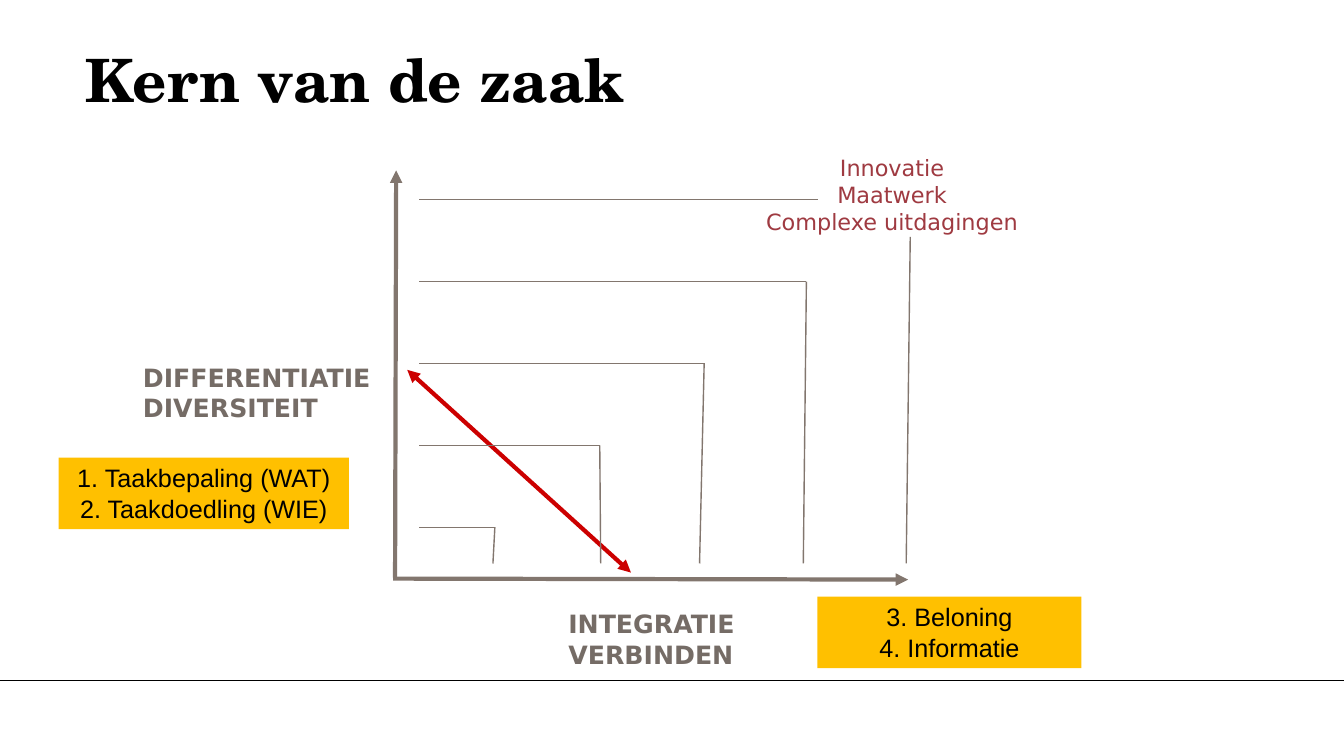
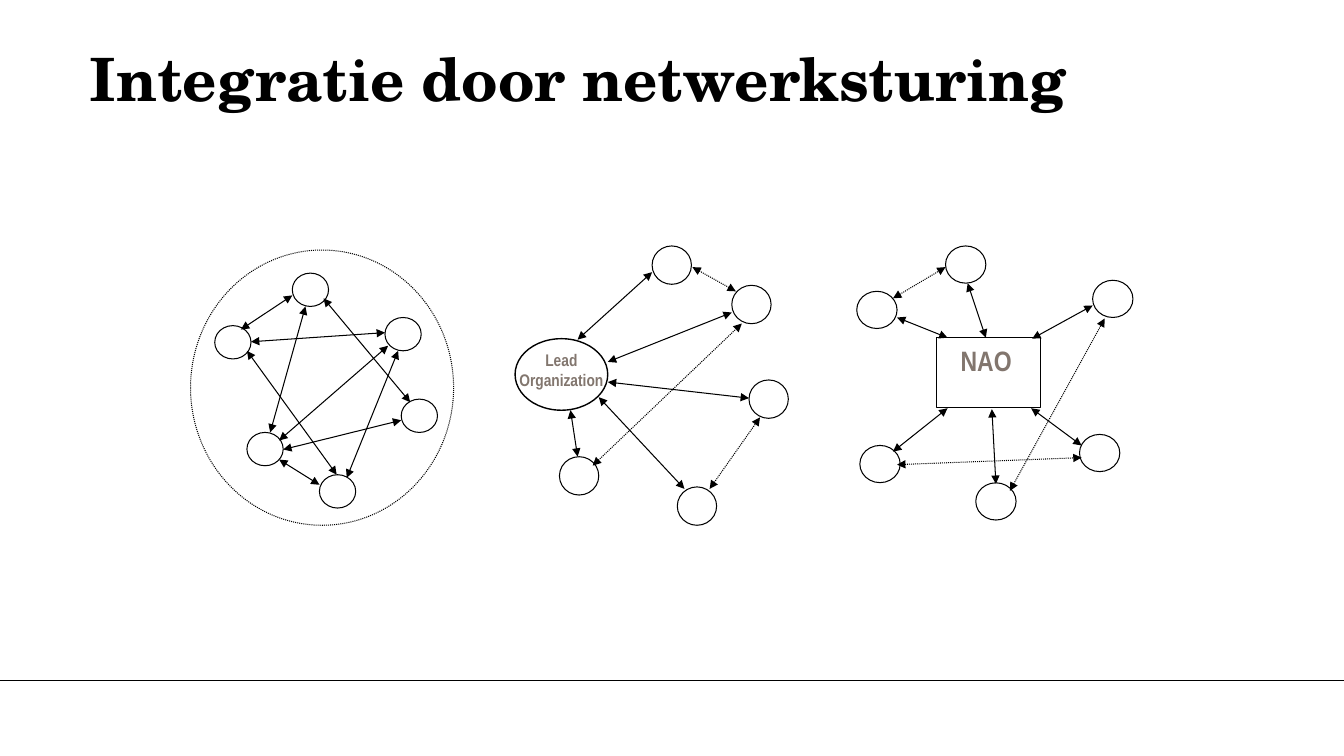
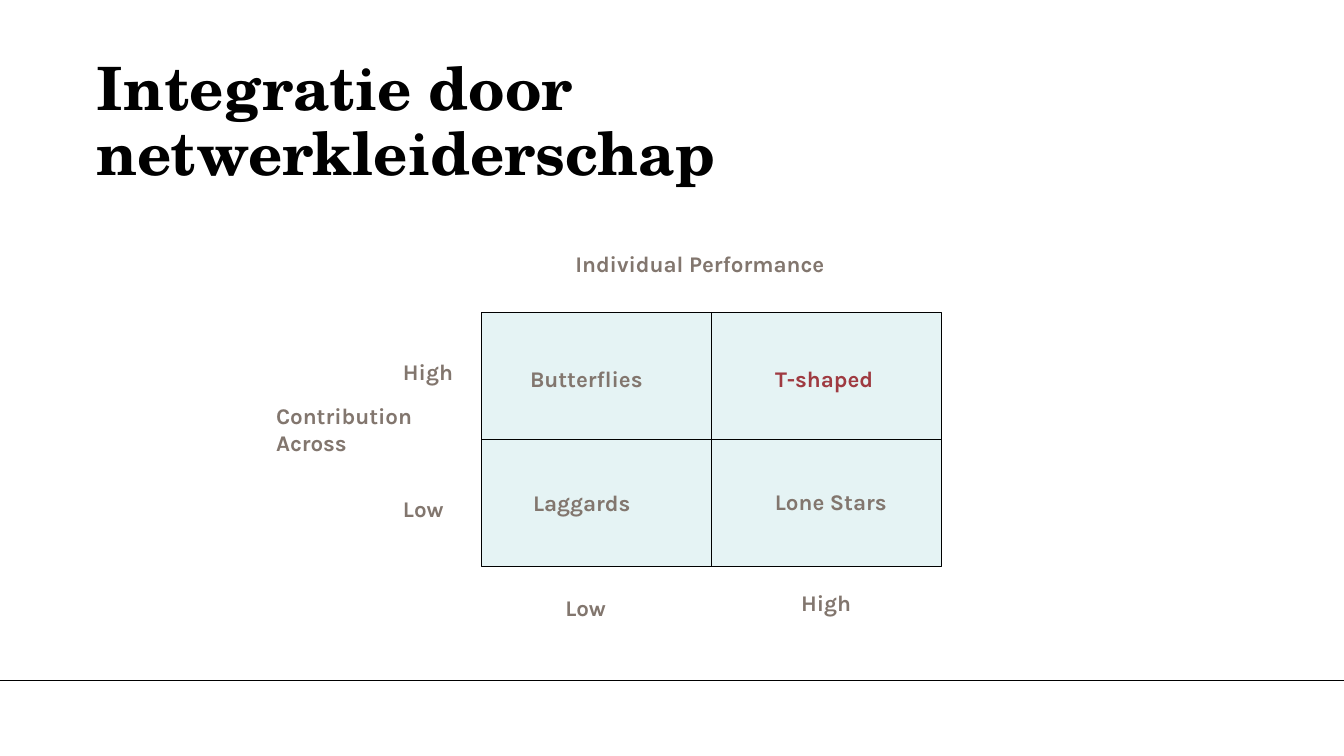
from dataclasses import dataclass
from itertools import product
from typing import NamedTuple

from lxml import etree
from pptx import Presentation
from pptx.dml.color import RGBColor
from pptx.enum import dml, shapes as kinds, text as txt
from pptx.oxml.ns import qn
from pptx.util import Pt


class TextStyle(NamedTuple):
    font: str
    size: float
    color: str
    bold: bool = True
    centered: bool = False


@dataclass(frozen=True)
class Theme:
    ink: str = "000000"
    paper: str = "FFFFFF"
    taupe: str = "82766E"
    tension: str = "CC0000"
    callout: str = "FFC000"
    quadrant: str = "BBE0E3"
    quadrant_opacity: int = 38
    thin: float = 0.75
    title: TextStyle = TextStyle("TeX Gyre Schola", 42.7, "000000")
    axis: TextStyle = TextStyle("DejaVu Sans", 18, "756C66")
    goal: TextStyle = TextStyle("DejaVu Sans", 16, "9F3A41", False, True)
    step: TextStyle = TextStyle("Arial", 18, "000000", False, True)
    lead: TextStyle = TextStyle("Arial Narrow", 12, "82766E", True, True)
    nao: TextStyle = TextStyle("Arial Narrow", 20, "82766E", True, True)
    matrix: TextStyle = TextStyle("Karla", 16, "82766E")
    highlight: TextStyle = TextStyle("Karla", 16, "9F3A41")


THEME = Theme()
WIDTH, HEIGHT, FOOTER_Y = 960, 540, 486
OVAL = kinds.MSO_SHAPE.OVAL
RECTANGLE = kinds.MSO_SHAPE.RECTANGLE


class Box(NamedTuple):
    left: float
    top: float
    width: float
    height: float


class Link(NamedTuple):
    x1: float
    y1: float
    x2: float
    y2: float
    dotted: bool = False


class Bracket(NamedTuple):
    """A step in the chart: a level line, and a drop from its corner to a foot."""
    level_end: float
    corner_x: float
    foot_x: float
    drop: float = 0


class Label(NamedTuple):
    words: str
    box: Box
    style: TextStyle = THEME.matrix


class Hub(NamedTuple):
    kind: kinds.MSO_SHAPE
    box: Box
    weight: float
    fill: str | None = None
    dotted: bool = False
    label: Label | None = None


class Network(NamedTuple):
    hub: Hub
    node_width: float
    node_height: float
    nodes: list[tuple[float, float]]
    links: list[Link]


def write(frame, words: str, style: TextStyle, spacing: float | None = None) -> None:
    frame.word_wrap = True
    frame.vertical_anchor = txt.MSO_ANCHOR.TOP
    frame.text = words
    for paragraph in frame.paragraphs:
        paragraph.alignment = txt.PP_ALIGN.CENTER if style.centered else txt.PP_ALIGN.LEFT
        if spacing:
            paragraph.line_spacing = spacing
        font = paragraph.font
        font.name, font.size, font.bold = style.font, Pt(style.size), style.bold
        font.color.rgb = RGBColor.from_string(style.color)


def add_label(canvas, label: Label, spacing: float | None = None) -> None:
    textbox = canvas.add_textbox(*map(Pt, label.box))
    write(textbox.text_frame, label.words, label.style, spacing)


def set_line(line, color: str, weight: float, dotted: bool = False) -> None:
    line.color.rgb = RGBColor.from_string(color)
    line.width = Pt(weight)
    if dotted:
        line.dash_style = dml.MSO_LINE.ROUND_DOT


def add_figure(canvas, kind, box: Box, fill: str | None, weight: float = 0,
               dotted: bool = False):
    figure = canvas.add_shape(kind, *map(Pt, box))
    figure.shadow.inherit = False
    if fill:
        figure.fill.solid()
        figure.fill.fore_color.rgb = RGBColor.from_string(fill)
    else:
        figure.fill.background()
    if weight:
        set_line(figure.line, THEME.ink, weight, dotted)
    else:
        figure.line.fill.background()
    return figure


def add_line(canvas, link: Link, color: str, weight: float,
             arrows: tuple[str, ...] = ()) -> None:
    """Draw a line; arrows names its pointed ends, headEnd (start) before tailEnd."""
    connector = canvas.add_connector(kinds.MSO_CONNECTOR.STRAIGHT, *map(Pt, link[:4]))
    set_line(connector.line, color, weight, link.dotted)
    properties = connector.element.spPr
    for end in arrows:
        etree.SubElement(properties.find(qn("a:ln")), qn(f"a:{end}"), type="triangle")
    etree.SubElement(properties, qn("a:effectLst"))


BOTH_ENDS = ("headEnd", "tailEnd")


def new_slide(deck, title: str, box: Box):
    canvas = deck.slides.add_slide(deck.slide_layouts[6]).shapes
    add_line(canvas, Link(0, FOOTER_Y, WIDTH, FOOTER_Y), THEME.ink, 0.5)
    add_label(canvas, Label(title, box, THEME.title), spacing=0.9)
    return canvas


LEVEL_LEFT, LEVEL_TOP, LEVEL_GAP, FOOT_Y = 299.5, 142.6, 58.5, 402.5
BRACKETS = [
    Bracket(584, 650.2, 647.3, drop=26.6),
    Bracket(576, 576, 573.8),
    Bracket(503.3, 503, 499.7),
    Bracket(428.4, 428.4, 429.1),
    Bracket(353.5, 353.5, 352.1),
]
AXES = [Link(283, 121.7, 282.2, 412.6), Link(648.7, 414, 280.8, 413.3)]
TENSION = Link(290.9, 264.2, 450.7, 409)
CORE_LABELS = [
    Label("Innovatie\nMaatwerk\nComplexe uitdagingen", Box(521.3, 106.6, 231.8, 65.5), THEME.goal),
    Label("INTEGRATIE\nVERBINDEN", Box(398.9, 431.3, 142.6, 51.1), THEME.axis),
    Label("DIFFERENTIATIE\nDIVERSITEIT", Box(95, 254.9, 188.6, 51.1), THEME.axis),
]
CALLOUTS = [
    Label("1. Taakbepaling (WAT)\n2. Taakdoedling (WIE)", Box(41.8, 326.9, 207.4, 51.1), THEME.step),
    Label("3. Beloning\n4. Informatie", Box(583.9, 426.2, 188.6, 51.1), THEME.step),
]


def build_core(deck) -> None:
    canvas = new_slide(deck, "Kern van de zaak", Box(54, 33.1, 460.8, 67))
    for axis in AXES:
        add_line(canvas, axis, THEME.taupe, 3, ("headEnd",))
    add_line(canvas, TENSION, THEME.tension, 3, BOTH_ENDS)
    for index, bracket in enumerate(BRACKETS):
        level = LEVEL_TOP + index * LEVEL_GAP
        add_line(canvas, Link(LEVEL_LEFT, level, bracket.level_end, level), THEME.taupe, 1)
        add_line(canvas, Link(bracket.corner_x, level + bracket.drop, bracket.foot_x, FOOT_Y),
                 THEME.taupe, 1)
    for label in CORE_LABELS:
        add_label(canvas, label)
    for callout in CALLOUTS:
        figure = add_figure(canvas, RECTANGLE, callout.box, THEME.callout)
        write(figure.text_frame, callout.words, callout.style)


SHARED = Network(
    hub=Hub(OVAL, Box(136.1, 178.6, 187.9, 196.6), THEME.thin, dotted=True),
    node_width=25.9, node_height=23.8,
    nodes=[(208.8, 195.1), (153.4, 232.6), (176.4, 308.9),
           (286.6, 285.1), (228.2, 339.1), (275, 226.8)],
    links=[
        Link(179.3, 244.1, 275, 237.6),
        Link(172.1, 235.4, 208.8, 211),
        Link(193, 308.9, 218.2, 218.9),
        Link(199.4, 314.6, 277.2, 247),
        Link(202.3, 321.1, 286.6, 300.2),
        Link(199.4, 328.3, 228.2, 346.3),
        Link(231.1, 213.1, 293, 287.3),
        Link(176.4, 250.6, 240.5, 339.1),
        Link(284.4, 250.6, 247.7, 341.3),
    ],
)
LEAD = Network(
    hub=Hub(OVAL, Box(367.9, 241.9, 66.2, 51.1), 1, THEME.paper,
            label=Label("Lead Organization", Box(359.3, 246.2, 83.5, 37.4), THEME.lead)),
    node_width=28.1, node_height=27.4,
    nodes=[(465.8, 175.7), (399.6, 326.2), (535, 271.4), (483.8, 347.8), (522.7, 203.8)],
    links=[
        Link(412.6, 242.6, 465.8, 194.4),
        Link(494.6, 190.8, 525.6, 208.1, dotted=True),
        Link(434.2, 258.5, 522.7, 223.2),
        Link(434.2, 272.9, 535, 284.4),
        Link(423.4, 332.6, 529.9, 231.1, dotted=True),
        Link(506.9, 349.2, 542.9, 298.1, dotted=True),
        Link(427.7, 283.7, 488.9, 349.2),
        Link(407.5, 293, 412.6, 326.2),
    ],
)
NAO = Network(
    hub=Hub(RECTANGLE, Box(668.9, 241.2, 74.2, 49.7), THEME.thin,
            label=Label("NAO", Box(658.8, 241.9, 91.4, 44.6), THEME.nao)),
    node_width=28.8, node_height=26.6,
    nodes=[(675.4, 175.7), (612, 208.1), (614.2, 318.2),
           (771.1, 310.3), (697, 344.9), (780.5, 200.2)],
    links=[
        Link(737.3, 241.9, 780.5, 218.2),
        Link(676.8, 241.2, 640.8, 226.8),
        Link(691.2, 202.3, 704.2, 241.2),
        Link(676.8, 291.6, 637.9, 322.6),
        Link(708.5, 292.3, 711.4, 345.6),
        Link(736.6, 291.6, 772.6, 318.2),
        Link(637.9, 213.1, 675.4, 190.8, dotted=True),
        Link(640.8, 331.9, 772.6, 326.9, dotted=True),
        Link(721.4, 350.6, 789.1, 227.5, dotted=True),
    ],
)


def add_network(canvas, network: Network) -> None:
    group = canvas.add_group_shape().shapes
    hub = network.hub
    add_figure(group, hub.kind, hub.box, hub.fill, hub.weight, hub.dotted)
    if hub.label:
        add_label(group, hub.label)
    for left, top in network.nodes:
        node = Box(left, top, network.node_width, network.node_height)
        add_figure(group, OVAL, node, THEME.paper, THEME.thin)
    for link in network.links:
        add_line(group, link, THEME.ink, THEME.thin, BOTH_ENDS)


def build_networks(deck) -> None:
    canvas = new_slide(deck, "Integratie door netwerksturing", Box(56.9, 32.4, 787.7, 67))
    for network in (SHARED, LEAD, NAO):
        add_network(canvas, network)


GRID_LEFT, GRID_TOP, CELL_WIDTH, CELL_HEIGHT = 344.2, 223.2, 164.2, 90.7
MATRIX_LABELS = [
    Label("Individual Performance", Box(403.9, 175, 205.9, 26.6)),
    Label("Contribution\nAcross", Box(190.1, 283.7, 116.6, 46.1)),
    Label("High", Box(280.8, 252, 52.6, 26.6)),
    Label("Low", Box(280.8, 349.9, 48.2, 26.6)),
    Label("Low", Box(396.7, 421.2, 48.2, 26.6)),
    Label("High", Box(565.2, 417.6, 52.6, 26.6)),
    Label("Butterflies", Box(371.5, 257, 100.1, 26.6)),
    Label("T-shaped", Box(546.5, 257, 90, 26.6), THEME.highlight),
    Label("Laggards", Box(373.7, 345.6, 89.3, 26.6)),
    Label("Lone Stars", Box(546.5, 344.9, 100.8, 26.6)),
]


def build_matrix(deck) -> None:
    canvas = new_slide(deck, "Integratie door netwerkleiderschap", Box(61.9, 38.9, 807.1, 67))
    for row, column in product(range(2), repeat=2):
        cell = Box(GRID_LEFT + column * CELL_WIDTH, GRID_TOP + row * CELL_HEIGHT,
                   CELL_WIDTH, CELL_HEIGHT)
        quadrant = add_figure(canvas, RECTANGLE, cell, THEME.quadrant, THEME.thin)
        tint = quadrant.element.spPr.find(qn("a:solidFill"))[0]
        etree.SubElement(tint, qn("a:alpha"), val=str(THEME.quadrant_opacity * 1000))
    for label in MATRIX_LABELS:
        add_label(canvas, label)


def main() -> None:
    deck = Presentation()
    deck.slide_width, deck.slide_height = Pt(WIDTH), Pt(HEIGHT)
    build_core(deck)
    build_networks(deck)
    build_matrix(deck)
    deck.save("out.pptx")


if __name__ == "__main__":
    main()
